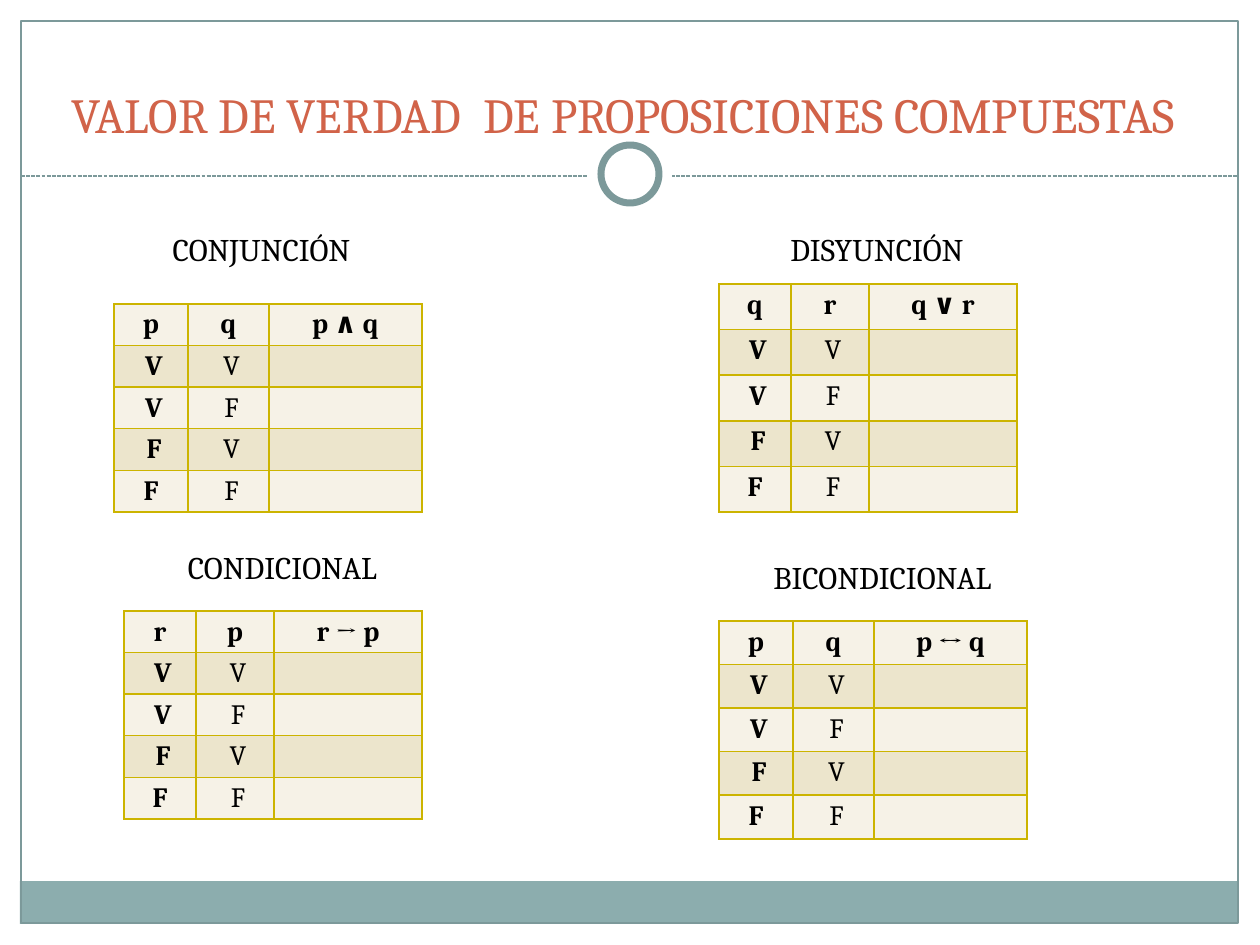
from lxml import etree
from pptx import Presentation, util as u
from pptx.dml.color import RGBColor
from pptx.enum import dml, shapes, text
from pptx.oxml import ns

SCALE = u.Inches(1) / 126  # EMU in one px

WHITE = RGBColor(0xFF, 0xFF, 0xFF)
BLACK = RGBColor(0x00, 0x00, 0x00)
TEAL = RGBColor(0x7C, 0x99, 0x9A)
BAND = RGBColor(0x8C, 0xAD, 0xAE)
ORANGE = RGBColor(0xD1, 0x63, 0x49)
GOLD = RGBColor(0xCC, 0xB4, 0x00)
CREAM = RGBColor(0xF6, 0xF2, 0xE7)
SAND = RGBColor(0xEC, 0xE5, 0xCC)

FONT = "Cambria"
NARROW = (72, 78, 148)
WIDE = (74, 81, 153)
VALUES = [(" V", " V"), (" V", " F"), (" F", " V"), ("F", " F")]

# Heading, heading area, table left, top, height, columns, header row
TRUTH_TABLES = [
    ("CONJUNCIÓN", (123, 224, 277, 50), 114, 304, 208, WIDE, ("p", "q", "p ∧ q")),
    ("DISYUNCIÓN", (758, 224, 238, 50), 719, 284, 228, NARROW, ("q", "r", "q ∨ r")),
    ("CONDICIONAL", (144, 542, 277, 50), 124, 611, 208, NARROW, ("r", "p", "r → p")),
    ("BICONDICIONAL", (730, 552, 305, 50), 719, 621, 218, WIDE, ("p", "q", "p ↔ q")),
]


def px(*lengths):
    return [u.Emu(round(length * SCALE)) for length in lengths]


def apply(target, values):
    for name, value in values.items():
        setattr(target, name, value)


def write(frame, words, size, color=BLACK, bold=False, spacing=None):
    para = frame.paragraphs[0]
    apply(para, {"alignment": text.PP_ALIGN.CENTER, "line_spacing": spacing})
    span = para.add_run()
    span.text = words
    apply(span.font, {"name": FONT, "size": u.Pt(size), "bold": bold})
    span.font.color.rgb = color


def add_panel(page, area, fill=None, line=None, width=0.75,
              kind=shapes.MSO_SHAPE.RECTANGLE):
    panel = page.shapes.add_shape(kind, *px(*area))
    panel.shadow.inherit = False
    if fill is None:
        panel.fill.background()
    else:
        panel.fill.solid()
        panel.fill.fore_color.rgb = fill
    if line is None:
        panel.line.fill.background()
    else:
        panel.line.color.rgb = line
        panel.line.width = u.Pt(width)


def add_divider(page, left, right, y):
    divider = page.shapes.add_connector(
        shapes.MSO_CONNECTOR.STRAIGHT, *px(left, y, right, y))
    divider.line.color.rgb = TEAL
    apply(divider.line, {"width": u.Pt(0.75),
                         "dash_style": dml.MSO_LINE.SQUARE_DOT})
    etree.SubElement(divider._element.spPr, ns.qn("a:effectLst"))


def add_frame(page):
    """Margins, bottom band, border and the ring on the dashed divider."""
    oval = shapes.MSO_SHAPE.OVAL
    for margin in [(0, 0, 1260, 192), (0, 0, 21, 945), (1239, 0, 21, 945)]:
        add_panel(page, margin, WHITE)
    add_panel(page, (20, 881, 1217, 43), BAND)
    add_panel(page, (21, 21, 1217, 902), line=TEAL)
    add_divider(page, 21, 1238, 176)
    add_panel(page, (588, 132, 84, 84), WHITE, kind=oval)
    add_panel(page, (601, 145, 58, 58), WHITE, TEAL, 4, oval)


def set_title(page, words):
    title = page.shapes.title
    page.shapes._spTree.append(title._element)  # in front of the frame
    left, top, width, height = px(35, 45, 1176, 105)
    apply(title, {"left": left, "top": top, "width": width, "height": height})
    apply(title.text_frame, {"vertical_anchor": text.MSO_ANCHOR.BOTTOM,
                             "auto_size": text.MSO_AUTO_SIZE.NONE,
                             "word_wrap": True})
    write(title.text_frame, words, 28, ORANGE)


def add_heading(page, words, area):
    box = page.shapes.add_textbox(*px(*area))
    apply(box.text_frame, {"word_wrap": True,
                           "auto_size": text.MSO_AUTO_SIZE.SHAPE_TO_FIT_TEXT})
    write(box.text_frame, words, 18)


def add_borders(cell):
    props = cell._tc.get_or_add_tcPr()
    for side in ("lnL", "lnR", "lnT", "lnB"):
        line = etree.SubElement(props, ns.qn("a:" + side), w=str(u.Pt(1)))
        fill = etree.SubElement(line, ns.qn("a:solidFill"))
        etree.SubElement(fill, ns.qn("a:srgbClr"), val=str(GOLD))


def add_truth_table(page, left, top, height, columns, header):
    rows = [header] + [pair + ("",) for pair in VALUES]
    table = page.shapes.add_table(
        len(rows), len(columns), *px(left, top, sum(columns), height)).table
    apply(table, {"first_row": False, "horz_banding": False})
    for column, width in zip(table.columns, px(*columns)):
        column.width = width
    side, = px(9)
    for i, row in enumerate(rows):
        for j, words in enumerate(row):
            cell = table.cell(i, j)
            apply(cell, {"margin_left": side, "margin_right": side,
                         "margin_top": 0, "margin_bottom": 0})
            add_borders(cell)
            cell.fill.solid()
            cell.fill.fore_color.rgb = SAND if i % 2 else CREAM
            if words:
                write(cell.text_frame, words, 16, bold=i == 0 or j == 0,
                      spacing=1.15)


def main():
    deck = Presentation()
    deck.slide_width, deck.slide_height = px(1260, 945)
    page = deck.slides.add_slide(deck.slide_layouts[5])
    add_frame(page)
    set_title(page, "VALOR DE VERDAD  DE PROPOSICIONES COMPUESTAS")
    for heading, area, *layout in TRUTH_TABLES:
        add_truth_table(page, *layout)
        add_heading(page, heading, area)
    deck.save("out.pptx")


if __name__ == "__main__":
    main()
